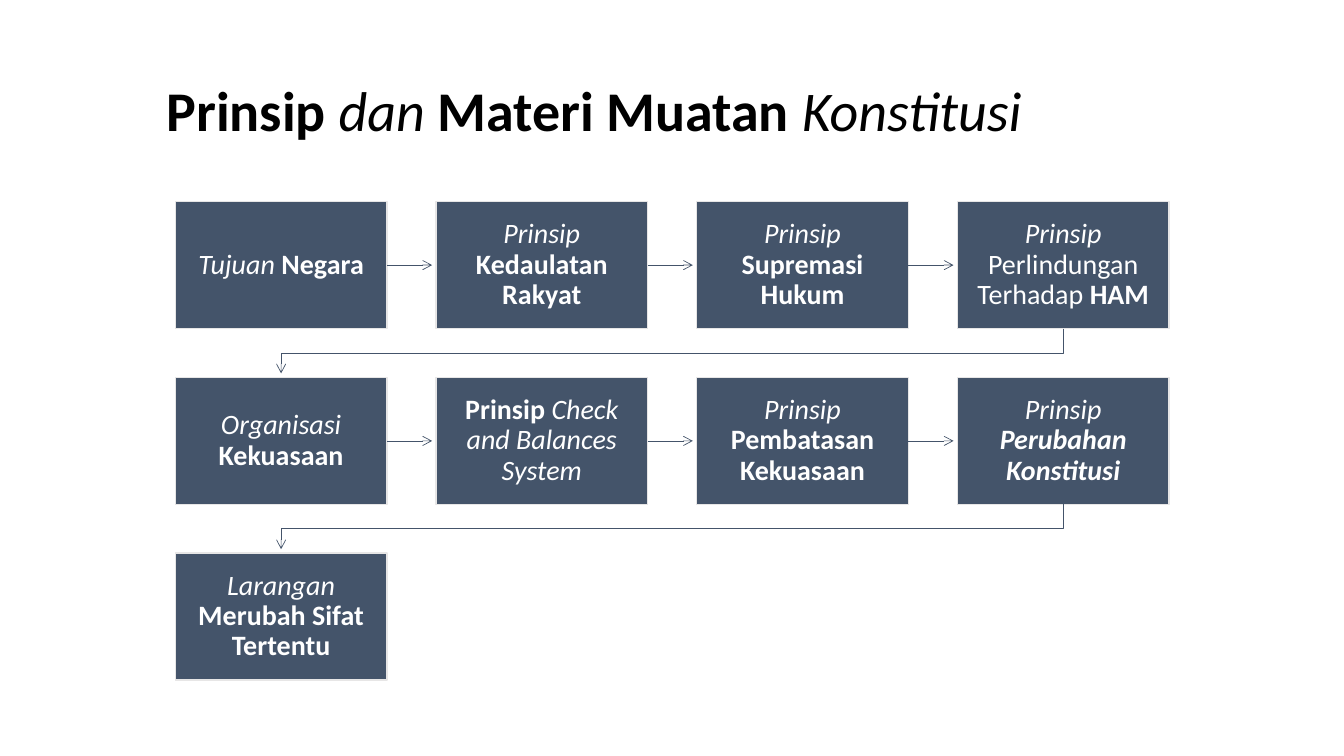
from lxml.etree import SubElement
from pptx import Presentation
from pptx.dml.color import RGBColor
from pptx.enum.shapes import MSO_CONNECTOR as Connector, MSO_SHAPE as Shape
from pptx.enum.text import MSO_ANCHOR as Anchor, MSO_AUTO_SIZE as AutoSize, PP_ALIGN as Align
from pptx.oxml.ns import qn
from pptx.util import Cm, Pt

TITLE = [("Prinsip ", "b"), ("dan ", "i"), ("Materi Muatan ", "b"), ("Konstitusi", "i")]
STEPS = [
    [("Tujuan ", "i"), ("Negara", "b")],
    [("Prinsip ", "i"), ("Kedaulatan Rakyat", "b")],
    [("Prinsip ", "i"), ("Supremasi Hukum", "b")],
    [("Prinsip ", "i"), ("Perlindungan Terhadap ", ""), ("HAM", "b")],
    [("Organisasi ", "i"), ("Kekuasaan", "b")],
    [("Prinsip ", "b"), ("Check and Balances System", "i")],
    [("Prinsip ", "i"), ("Pembatasan Kekuasaan", "b")],
    [("Prinsip ", "i"), ("Perubahan Konstitusi", "bi")],
    [("Larangan ", "i"), ("Merubah Sifat Tertentu", "b")],
]
SLATE, PALE, WHITE, BLACK = "44546A", "E7E6E6", "FFFFFF", "000000"
COLUMNS = 4
LEFT, TOP = Cm(4.42), Cm(5.08)
BOX_WIDTH, BOX_HEIGHT = Cm(5.33), Cm(3.2)
COLUMN_STEP, ROW_STEP = Cm(6.57), Cm(4.43)
ARROW_GAP = Cm(0.1)
INSET = Cm(0.4)


def color(value):
    return RGBColor.from_string(value)


def write(frame, spans, size, ink, align):
    frame.word_wrap = True
    frame.auto_size = AutoSize.NONE
    frame.vertical_anchor = Anchor.MIDDLE
    para = frame.paragraphs[0]
    para.alignment = align
    para.line_spacing = 0.9
    para.font.name = "Calibri"
    para.font.size = Pt(size)
    para.font.color.rgb = color(ink)
    for text, style in spans:
        span = para.add_run()
        span.text = text
        span.font.bold = "b" in style
        span.font.italic = "i" in style


def style_arrow(line):
    line.color.rgb = color(SLATE)
    line.width = Pt(0.5)


def add_head(arrow):
    outline = arrow.element.spPr.find(qn("a:ln"))
    SubElement(outline, qn("a:tailEnd"), type="arrow")


def add_box(page, index, spans):
    row, column = divmod(index, COLUMNS)
    box = page.shapes.add_shape(
        Shape.RECTANGLE, LEFT + column * COLUMN_STEP, TOP + row * ROW_STEP, BOX_WIDTH, BOX_HEIGHT
    )
    box.shadow.inherit = False
    box.fill.solid()
    box.fill.fore_color.rgb = color(SLATE)
    box.line.color.rgb = color(PALE)
    box.line.width = Pt(1)
    frame = box.text_frame
    frame.margin_left = frame.margin_right = frame.margin_top = frame.margin_bottom = INSET
    write(frame, spans, 20, WHITE, Align.CENTER)
    return box


def add_straight_arrow(page, start, end):
    middle = start.top + BOX_HEIGHT // 2
    arrow = page.shapes.add_connector(
        Connector.STRAIGHT, start.left + BOX_WIDTH, middle, end.left - ARROW_GAP, middle
    )
    arrow.begin_connect(start, 3)
    style_arrow(arrow.line)
    add_head(arrow)
    SubElement(arrow.element.spPr, qn("a:effectLst"))


def add_return_arrow(page, start, end):
    start_x, end_x = (box.left + BOX_WIDTH // 2 for box in (start, end))
    bottom = start.top + BOX_HEIGHT
    turn = (bottom + end.top) // 2
    builder = page.shapes.build_freeform(start_x, bottom)
    builder.add_line_segments(
        [(start_x, turn), (end_x, turn), (end_x, end.top - ARROW_GAP)], close=False
    )
    arrow = builder.convert_to_shape()
    arrow.shadow.inherit = False
    arrow.fill.background()
    style_arrow(arrow.line)
    add_head(arrow)


def main():
    deck = Presentation()
    deck.slide_width, deck.slide_height = Cm(33.87), Cm(19.05)
    page = deck.slides.add_slide(deck.slide_layouts[5])
    title = page.shapes.title
    title.left, title.top, title.width, title.height = Cm(3.94), Cm(1.01), Cm(27.58), Cm(3.68)
    write(title.text_frame, TITLE, 40, BLACK, Align.LEFT)
    boxes = [add_box(page, index, spans) for index, spans in enumerate(STEPS)]
    for start, end in zip(boxes, boxes[1:]):
        connect = add_straight_arrow if start.top == end.top else add_return_arrow
        connect(page, start, end)
    deck.save("out.pptx")


if __name__ == "__main__":
    main()
